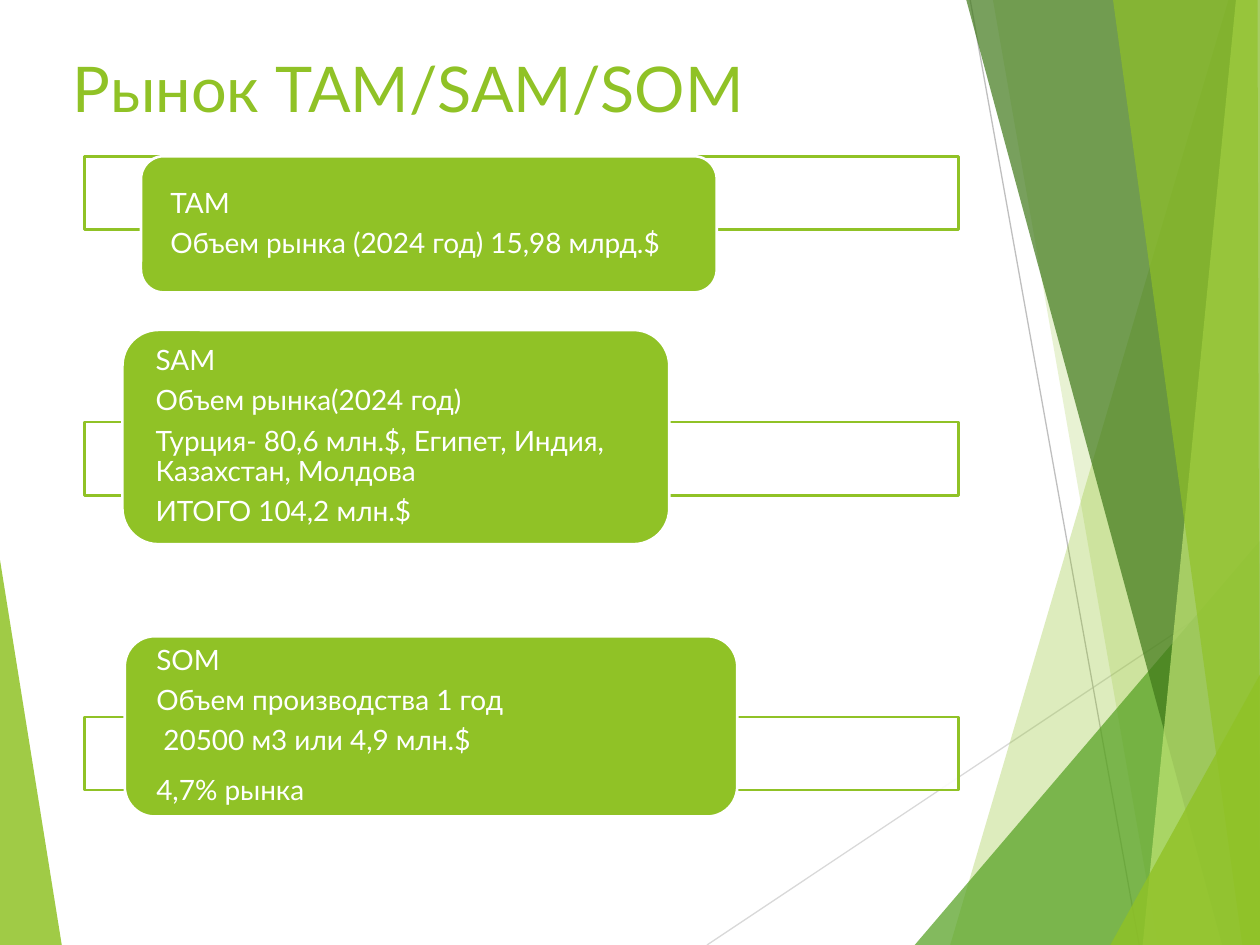
from lxml import etree
from pptx import Presentation
from pptx.dml.color import RGBColor
from pptx.enum import shapes as sh, text as tx
from pptx.oxml.ns import qn
from pptx.util import Pt

LIME = RGBColor(0x90, 0xC2, 0x26)
GREEN = RGBColor(0x54, 0xA0, 0x21)
DARK = RGBColor(0x3F, 0x78, 0x19)
PALE = RGBColor(0xC0, 0xE4, 0x74)
WHITE = RGBColor(0xFF, 0xFF, 0xFF)
GRAY = RGBColor(0xD9, 0xD9, 0xD9)
SILVER = RGBColor(0xBF, 0xBF, 0xBF)
W, H = 720, 540

prs = Presentation()
prs.slide_width, prs.slide_height = Pt(W), Pt(H)
slide = prs.slides.add_slide(prs.slide_layouts[6])
items = slide.shapes


def paint(shape, color, alpha=100, edge=None):
    """Fill at alpha percent, with a 1.5 pt edge or none."""
    shape.shadow.inherit = False
    shape.fill.solid()
    shape.fill.fore_color.rgb = color
    if alpha < 100:
        tint = shape.fill._xPr.find(qn("a:solidFill"))[0]
        etree.SubElement(tint, qn("a:alpha"), val=str(alpha * 1000))
    if edge is None:
        shape.line.fill.background()
    else:
        shape.line.color.rgb = edge
        shape.line.width = Pt(1.5)


def write(frame, lines, size, color, form):
    """Fill a text frame with one paragraph per line, each set by form."""
    frame.word_wrap = True
    frame.vertical_anchor = tx.MSO_ANCHOR.MIDDLE
    for i, line in enumerate(lines):
        para = frame.paragraphs[0] if i == 0 else frame.add_paragraph()
        para.alignment = tx.PP_ALIGN.LEFT
        for name, value in form.items():
            setattr(para, name, value)
        run = para.add_run()
        run.text = line
        run.font.name, run.font.size = "Lato", Pt(size)
        run.font.color.rgb = color


# Facets at the slide's edges, with two thin lines between them
facets = [
    (LIME, 85, [(0, 320), (35.3, H), (0, H)]),
    (LIME, 30, [(702, 0), (543, H), (W, H), (W, 0)]),
    (LIME, 20, [(567.4, 0), (661.7, H), (W, H), (W, 0)]),
    (GREEN, 72, [(522.7, H), (W, 309), (W, H)]),
    (DARK, 70, [(552.2, 0), (698.4, H), (W, H), (W, 0)]),
    (PALE, 70, [(706.3, 0), (653, H), (W, H), (W, 0)]),
    (LIME, 65, [(636, 0), (709.9, H), (W, H), (718.6, 0)]),
    (LIME, 80, [(634.5, H), (W, 385.5), (W, H)]),
]
rays = [(GRAY, 404, H, W, 329.3), (SILVER, 554.4, 0, 651, H)]

for i, (color, alpha, spots) in enumerate(facets):
    spots = [(Pt(x), Pt(y)) for x, y in spots]
    pen = items.build_freeform(*spots[0])
    pen.add_line_segments(spots[1:])
    paint(pen.convert_to_shape(), color, alpha)
    if i == 0:
        for tone, *ends in rays:
            ray = items.add_connector(
                sh.MSO_CONNECTOR.STRAIGHT, *[Pt(v) for v in ends])
            ray.line.color.rgb = tone
            ray.line.width = Pt(0.75)
            etree.SubElement(ray._element.spPr, qn("a:effectLst"))

title = items.add_textbox(Pt(34.6), Pt(23), Pt(576), Pt(54))
write(title.text_frame, ["Рынок TAM/SAM/SOM"], 36, LIME, {})

# Each market: top of its bar, box of its card, text
markets = [
    (89.3, (80.6, 89.3, 329, 77.8),
     ["TAM", "Объем рынка (2024 год) 15,98 млрд.$"]),
    (241.2, (70, 188.6, 312.5, 122.4),
     ["SAM", "Объем рынка(2024 год)",
      "Турция- 80,6 млн.$, Египет, Индия, Казахстан, Молдова",
      "ИТОГО 104,2 млн.$"]),
    (409.7, (71.3, 363.6, 350, 103),
     ["SOM", "Объем производства 1 год", " 20500 м3 или 4,9 млн.$",
      "4,7% рынка"]),
]
form = {"line_spacing": 0.9, "space_after": Pt(5.6)}
inset = {"margin_left": Pt(13), "margin_right": Pt(13),
         "margin_top": 0, "margin_bottom": 0}

for top, box, lines in markets:
    bar = items.add_shape(sh.MSO_SHAPE.RECTANGLE,
                          Pt(48.2), Pt(top), Pt(499.7), Pt(41.8))
    paint(bar, WHITE, 90, LIME)
    card = items.add_shape(sh.MSO_SHAPE.ROUNDED_RECTANGLE,
                           *[Pt(v) for v in box])
    paint(card, LIME, edge=WHITE)
    for name, value in inset.items():
        setattr(card.text_frame, name, value)
    write(card.text_frame, lines, 16, WHITE, form)

# The market share stands a little apart from the lines above it
card.text_frame.paragraphs[-1].space_before = Pt(6)

prs.save("out.pptx")
